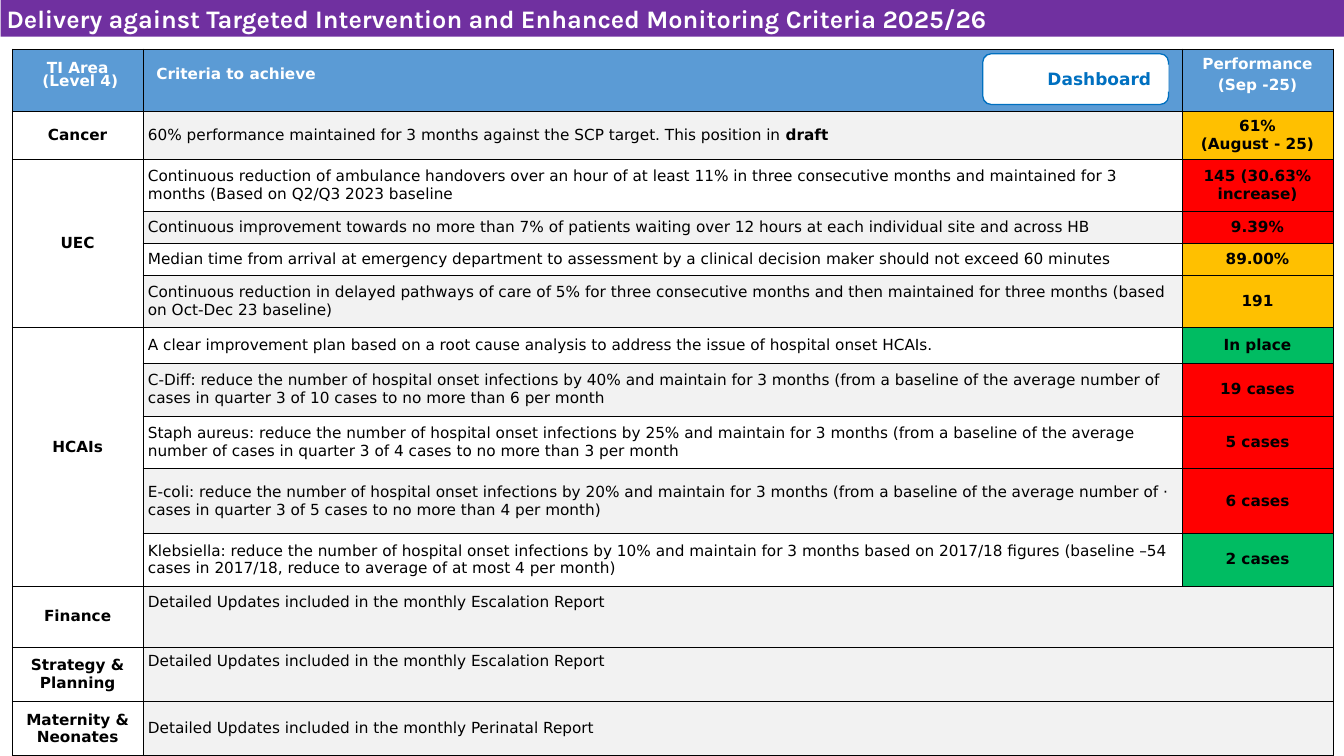
from dataclasses import dataclass

from lxml import etree
from pptx import Presentation
from pptx.dml.color import RGBColor
from pptx.enum.shapes import MSO_SHAPE
from pptx.enum.text import MSO_ANCHOR, PP_ALIGN
from pptx.oxml.ns import qn
from pptx.util import Pt

SCALE = 9144  # 100 px to the inch
RECT, ROUND = MSO_SHAPE.RECTANGLE, MSO_SHAPE.ROUNDED_RECTANGLE
TOP, MIDDLE = MSO_ANCHOR.TOP, MSO_ANCHOR.MIDDLE
LEFT, CENTER = PP_ALIGN.LEFT, PP_ALIGN.CENTER


@dataclass(frozen=True)
class Theme:
    font: str = "DejaVu Sans"
    display: str = "Karla"
    title: float = 29.7
    badge: int = 20
    body: int = 18
    lead: int = 8
    purple: str = "7030A0"
    blue: str = "0070C0"
    head: str = "5B9BD5"
    white: str = "FFFFFF"
    black: str = "000000"
    band: str = "F2F2F2"
    red: str = "FF0000"
    amber: str = "FFC000"
    green: str = "00BC62"


THEME = Theme()
RED, AMBER, GREEN = THEME.red, THEME.amber, THEME.green
COLS = (214, 1700, 247)
HEAD = 102
REPORT = "Detailed Updates included in the monthly {} Report"
HCAI = "{}: reduce the number of hospital onset infections by {}% and maintain for 3 months "
BASE = HCAI + "(from a baseline of the average number of {}cases in quarter 3 of {} cases to no more than {} per month"

# Height, area (empty: same as above), criteria (|bold|), result, colour
ROWS = (
    (79, "Cancer", "60% performance maintained for 3 months against the SCP target. "
     "This position in |draft|", "61%\n(August - 25)", AMBER),
    (85, "UEC", "Continuous reduction of ambulance handovers over an hour of at least 11% in three "
     "consecutive months and maintained for 3 months (Based on Q2/Q3 2023 baseline",
     "145 (30.63% increase)", RED),
    (52, "", "Continuous improvement towards no more than 7% of patients waiting over 12 hours "
     "at each individual site and across HB", "9.39%", RED),
    (52, "", "Median time from arrival at emergency department to assessment by a clinical "
     "decision maker should not exceed 60 minutes", "89.00%", AMBER),
    (85, "", "Continuous reduction in delayed pathways of care of 5% for three consecutive months "
     "and then maintained for three months (based on Oct-Dec 23 baseline)", "191", AMBER),
    (59, "HCAIs", "A clear improvement plan based on a root cause analysis to address the issue "
     "of hospital onset HCAIs.", "In place", GREEN),
    (87, "", BASE.format("C-Diff", 40, "", 10, 6), "19 cases", RED),
    (86, "", BASE.format("Staph aureus", 25, "", 4, 3), "5 cases", RED),
    (106, "", BASE.format("E-coli", 20, "· ", 5, 4) + ")", "6 cases", RED),
    (86, "", HCAI.format("Klebsiella", 10) + "based on 2017/18 figures (baseline –54 cases "
     "in 2017/18, reduce to average of at most 4 per month)", "2 cases", GREEN),
    (52, "Finance", REPORT.format("Escalation"), "", None),
    (48, "", "", "", None),
    (89, "Strategy & Planning", REPORT.format("Escalation"), "", None),
    (89, "Maternity & Neonates", REPORT.format("Perinatal"), "", None),
)


def px(n):
    return n * SCALE


def put(item, **values):
    for name, value in values.items():
        setattr(item, name, value)


def paint(fill, color):
    fill.solid()
    fill.fore_color.rgb = RGBColor.from_string(color)


def write(frame, text, size, color, bold=True, font=THEME.font, align=LEFT, lead=None, gap=0):
    """Fill a frame, one paragraph a line; text between bars turns bold."""
    for i, line in enumerate(text.split("\n")):
        para = frame.paragraphs[0] if i == 0 else frame.add_paragraph()
        put(para, alignment=align, line_spacing=lead, space_before=Pt(gap if i else 0))
        for j, part in enumerate(line.split("|")):
            if part:
                run = para.add_run()
                run.text = part
                put(run.font, name=font, size=Pt(size), bold=bold or j % 2 == 1)
                run.font.color.rgb = RGBColor.from_string(color)


def box(slide, kind, area, fill, line=None):
    shape = slide.shapes.add_shape(kind, *map(px, area))
    shape.shadow.inherit = False
    paint(shape.fill, fill)
    if line:
        paint(shape.line.fill, line)
        shape.line.width = Pt(1.5)
    else:
        shape.line.fill.background()
    put(shape.text_frame, word_wrap=True, vertical_anchor=MIDDLE)
    return shape


def border(cell, skip=""):
    """Rule the four sides, leaving the skipped one clear."""
    props = cell._tc.get_or_add_tcPr()
    for side in "LRTB":
        rule = etree.SubElement(props, qn(f"a:ln{side}"), w=str(Pt(1)))
        if side == skip:
            etree.SubElement(rule, qn("a:noFill"))
        else:
            solid = etree.SubElement(rule, qn("a:solidFill"))
            etree.SubElement(solid, qn("a:srgbClr"), val=THEME.black)


def style(cell, fill, side=8, edge=8, skip=""):
    border(cell, skip)
    paint(cell.fill, fill)
    put(cell, margin_left=px(side), margin_right=px(side), margin_top=px(edge),
        margin_bottom=px(edge), vertical_anchor=MIDDLE)


def header(table):
    labels = (("TI Area\n (Level 4)", CENTER, 8), ("Criteria to achieve", LEFT, 0),
              ("Performance\n(Sep -25)", CENTER, 16))
    for col, (text, align, gap) in enumerate(labels):
        cell = table.cell(0, col)
        style(cell, THEME.head, 22, 11)
        write(cell.text_frame, text, THEME.body, THEME.white, align=align,
              lead=Pt(THEME.lead), gap=gap)


def body(table):
    start = 1
    for i, (_, area, goal, result, color) in enumerate(ROWS, 1):
        band = THEME.band if i % 2 or not result else THEME.white
        open_side = "T" if not goal else "B" if area == "Finance" else ""
        cells = [table.cell(i, col) for col in range(3)]
        style(cells[0], THEME.white)
        style(cells[1], band, skip=open_side)
        style(cells[2], color or band, skip=open_side)
        for cell, text, bold, align in zip(cells, (area, goal, result), (True, False, True),
                                           (CENTER, LEFT, CENTER)):
            if text:
                write(cell.text_frame, text, THEME.body, THEME.black, bold, align=align)
        if area == "HCAIs":
            cells[0].margin_bottom = px(37)
        if area.startswith("Strategy"):
            cells[1].vertical_anchor = TOP
        if not result:
            cells[1].merge(cells[2])
        if area:
            start = i
        elif i == len(ROWS) or ROWS[i][1]:
            table.cell(start, 0).merge(cells[0])


def grid(slide, left, top):
    heights = [HEAD] + [row[0] for row in ROWS]
    area = map(px, (left, top, sum(COLS), sum(heights)))
    table = slide.shapes.add_table(len(heights), len(COLS), *area).table
    put(table, first_row=False, horz_banding=False)
    for col, width in zip(table.columns, COLS):
        col.width = px(width)
    for row, height in zip(table.rows, heights):
        row.height = px(height)
    header(table)
    body(table)


def banner(slide, area):
    shape = box(slide, RECT, area, THEME.purple)
    write(shape.text_frame, "Delivery against Targeted Intervention and Enhanced Monitoring "
          "Criteria 2025/26", THEME.title, THEME.white, font=THEME.display)


def badge(slide, left, top, width, height):
    box(slide, ROUND, (left, top, width, height), THEME.white, THEME.blue)
    label = box(slide, RECT, (left + 96, top + 18, width - 96, 44), THEME.white)
    write(label.text_frame, "Dashboard", THEME.badge, THEME.blue)


def main():
    deck = Presentation()
    put(deck, slide_width=px(2199), slide_height=px(1237))
    slide = deck.slides.add_slide(deck.slide_layouts[6])
    grid(slide, 20, 80)
    banner(slide, (1, 0, 2199, 60))
    badge(slide, 1608, 88, 304, 83)
    deck.save("out.pptx")


if __name__ == "__main__":
    main()
